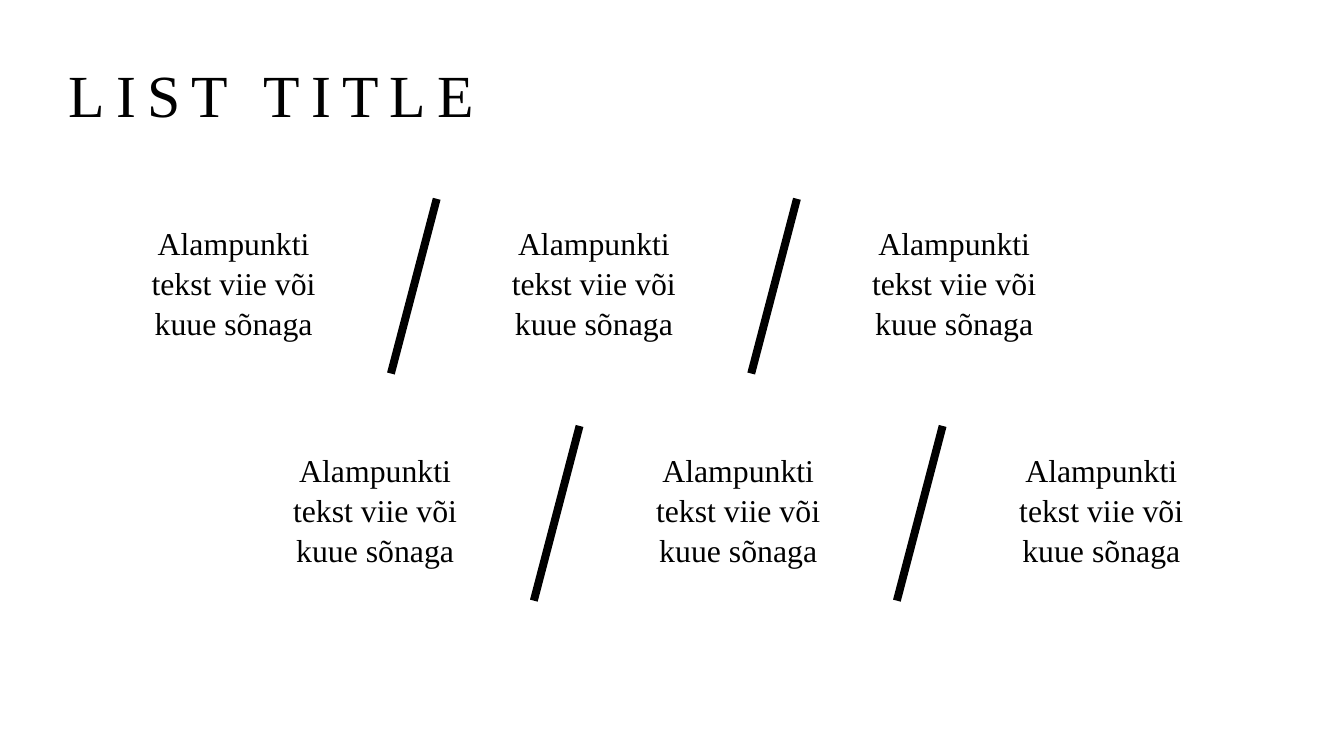
from pptx import Presentation
from pptx.dml.color import RGBColor
from pptx.enum.shapes import MSO_CONNECTOR
from pptx.enum.text import MSO_ANCHOR, MSO_AUTO_SIZE, PP_ALIGN
from pptx.oxml.ns import qn
from pptx.util import Pt
from lxml import etree

STRAIGHT = MSO_CONNECTOR.STRAIGHT
MIDDLE = MSO_ANCHOR.MIDDLE
FIT_SHAPE = MSO_AUTO_SIZE.SHAPE_TO_FIT_TEXT
LEFT, CENTER = PP_ALIGN.LEFT, PP_ALIGN.CENTER

FONT = "Times New Roman"
BLACK = "000000"
ITEM_LINES = ["Alampunkti", "tekst viie või", "kuue sõnaga"]
ITEM_COUNT = 3
ITEM_WIDTH, ITEM_HEIGHT = 118, 69
SLANT = 24.5


def color(value):
    return RGBColor.from_string(value)


def add_run(paragraph, text, size):
    run = paragraph.add_run()
    run.text = text
    run.font.name = FONT
    run.font.size = Pt(size)
    run.font.color.rgb = color(BLACK)
    return run


def add_title(slide, text, left, top, width, height):
    title = slide.shapes.title
    title.left, title.top = Pt(left), Pt(top)
    title.width, title.height = Pt(width), Pt(height)
    title.text_frame.vertical_anchor = MIDDLE
    title.text_frame.auto_size = MSO_AUTO_SIZE.NONE
    paragraph = title.text_frame.paragraphs[0]
    paragraph.alignment = LEFT
    run = add_run(paragraph, text, 32)
    run.font._element.set("spc", "600")


def add_separator(slide, center, top, height):
    separator = slide.shapes.add_connector(
        STRAIGHT, Pt(center + SLANT / 2), Pt(top),
        Pt(center - SLANT / 2), Pt(top + height))
    separator.line.color.rgb = color(BLACK)
    separator.line.width = Pt(4.25)
    etree.SubElement(separator._element.spPr, qn("a:effectLst"))


def add_item(slide, left, top):
    box = slide.shapes.add_textbox(
        Pt(left), Pt(top), Pt(ITEM_WIDTH), Pt(ITEM_HEIGHT))
    frame = box.text_frame
    frame.word_wrap = True
    frame.auto_size = FIT_SHAPE
    frame.vertical_anchor = MIDDLE
    for index, line in enumerate(ITEM_LINES):
        paragraph = frame.add_paragraph() if index else frame.paragraphs[0]
        paragraph.alignment = CENTER
        paragraph.line_spacing = 1.05
        add_run(paragraph, line, 17)


def add_item_row(slide, left, top, width, height):
    step = (width - ITEM_WIDTH) / (ITEM_COUNT - 1)
    for index in range(ITEM_COUNT):
        item_left = left + index * step
        add_item(slide, item_left, top + 10)
        if index < ITEM_COUNT - 1:
            add_separator(slide, item_left + (step + ITEM_WIDTH) / 2, top, height)


def main():
    presentation = Presentation()
    presentation.slide_width, presentation.slide_height = Pt(720), Pt(405)
    slide = presentation.slides.add_slide(presentation.slide_layouts[5])
    slide.background.fill.solid()
    slide.background.fill.fore_color.rgb = color("FFFFFF")
    add_title(slide, "LIST TITLE", 29.5, 16.5, 659, 67)
    add_item_row(slide, 66.2, 106.5, 504, 93.6)
    add_item_row(slide, 142, 228.2, 507, 93.6)
    presentation.save("out.pptx")


if __name__ == "__main__":
    main()
